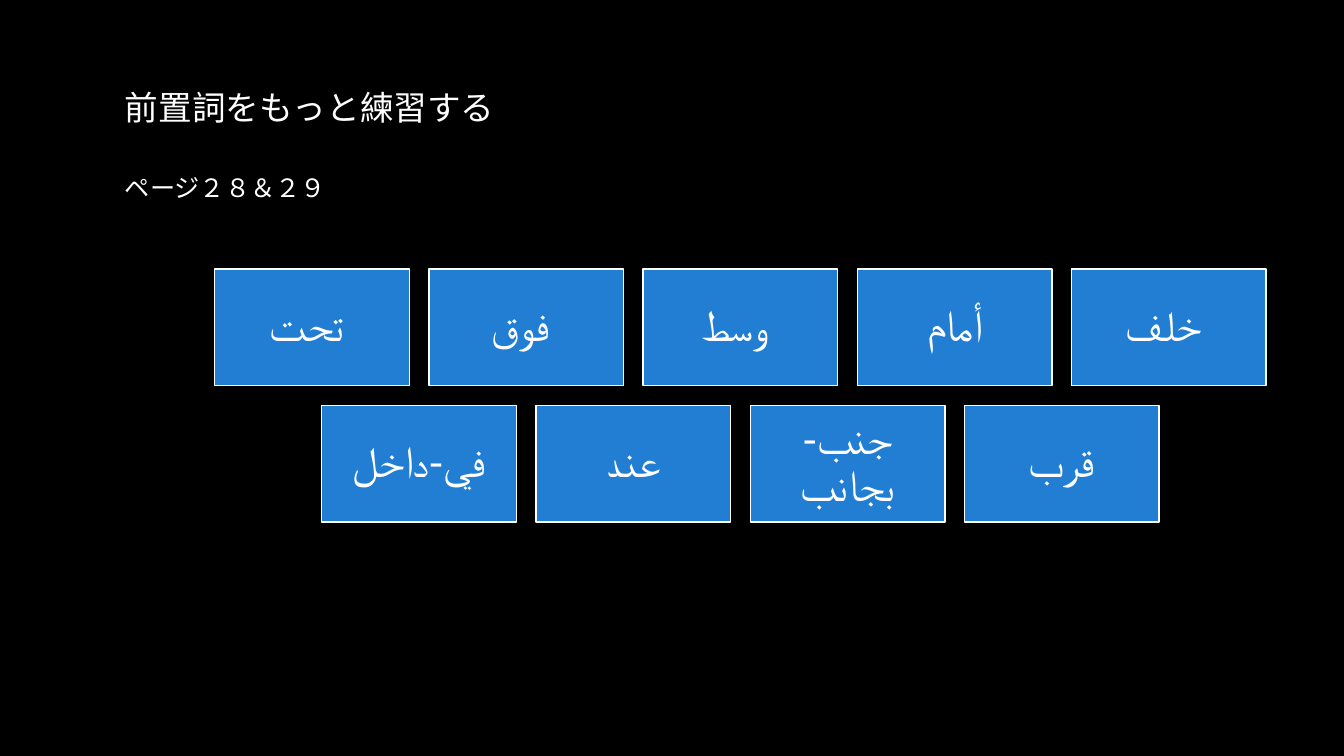
import dataclasses

import pptx
import pptx.dml.color
import pptx.enum.shapes
import pptx.enum.text
import pptx.oxml.xmlchemy
import pptx.util
from pptx.util import Pt


@dataclasses.dataclass(frozen=True)
class Theme:
    background: str = "000000"
    text: str = "FFFFFF"
    card: str = "217ED3"
    font: str = "Calibri"
    title_size: float = 24
    body_size: float = 18
    card_size: float = 31


THEME = Theme()
CARD_ROWS = [
    ["تحت ", "فوق ", "وسط ", "أمام", "خلف "],
    ["في-داخل", "عند", "جنب-بجانب", "قرب"],
]
CARD_WIDTH, CARD_HEIGHT, CARD_GAP = 139.1, 83.4, 13.9
CARDS_CENTER, CARDS_TOP = 528.9, 192.2


def rgb(value):
    return pptx.dml.color.RGBColor.from_string(value)


def write(shape, text, size, align, anchor):
    tf = shape.text_frame
    tf.word_wrap = True
    tf.auto_size = pptx.enum.text.MSO_AUTO_SIZE.NONE
    tf.vertical_anchor = anchor
    p = tf.paragraphs[0]
    p.text = text
    p.alignment = align
    p.space_before = Pt(0)
    p.font.name = THEME.font
    p.font.size = Pt(size)
    p.font.color.rgb = rgb(THEME.text)
    return p


def fill_placeholder(sp, text, size, left, top, width, height):
    sp.left, sp.top, sp.width, sp.height = Pt(left), Pt(top), Pt(width), Pt(height)
    return write(sp, text, size, pptx.enum.text.PP_ALIGN.LEFT,
                 pptx.enum.text.MSO_ANCHOR.TOP)


def remove_bullet(p):
    pPr = p._p.get_or_add_pPr()
    pPr.set("marL", "0")
    pPr.set("indent", "0")
    bullet = pptx.oxml.xmlchemy.OxmlElement("a:buNone")
    spacing = pPr.find(pptx.oxml.ns.qn("a:spcBef"))
    spacing.addnext(bullet)


def add_card(s, text, left, top):
    sp = s.shapes.add_shape(pptx.enum.shapes.MSO_SHAPE.RECTANGLE,
                            Pt(left), Pt(top), Pt(CARD_WIDTH), Pt(CARD_HEIGHT))
    sp.shadow.inherit = False
    sp.fill.solid()
    sp.fill.fore_color.rgb = rgb(THEME.card)
    sp.line.color.rgb = rgb(THEME.text)
    sp.line.width = Pt(1)
    tf = sp.text_frame
    tf.margin_left = tf.margin_right = tf.margin_top = tf.margin_bottom = Pt(9.3)
    p = write(sp, text, THEME.card_size, pptx.enum.text.PP_ALIGN.CENTER,
              pptx.enum.text.MSO_ANCHOR.MIDDLE)
    p.line_spacing = 0.9


def add_card_row(s, words, top):
    pitch = CARD_WIDTH + CARD_GAP
    left = CARDS_CENTER - (len(words) * pitch - CARD_GAP) / 2
    for column, word in enumerate(words):
        add_card(s, word, left + column * pitch, top)


def main():
    prs = pptx.Presentation()
    prs.slide_width, prs.slide_height = Pt(960), Pt(540)
    s = prs.slides.add_slide(prs.slide_layouts[1])
    s.background.fill.solid()
    s.background.fill.fore_color.rgb = rgb(THEME.background)
    title, body = s.placeholders
    fill_placeholder(title, "前置詞をもっと練習する", THEME.title_size, 82, 58.3, 708.5, 36)
    p = fill_placeholder(body, "ページ２８＆２９", THEME.body_size, 82, 119.5, 639.4, 29)
    remove_bullet(p)
    for row, words in enumerate(CARD_ROWS):
        add_card_row(s, words, CARDS_TOP + row * (CARD_HEIGHT + CARD_GAP))
    prs.save("out.pptx")


if __name__ == "__main__":
    main()
